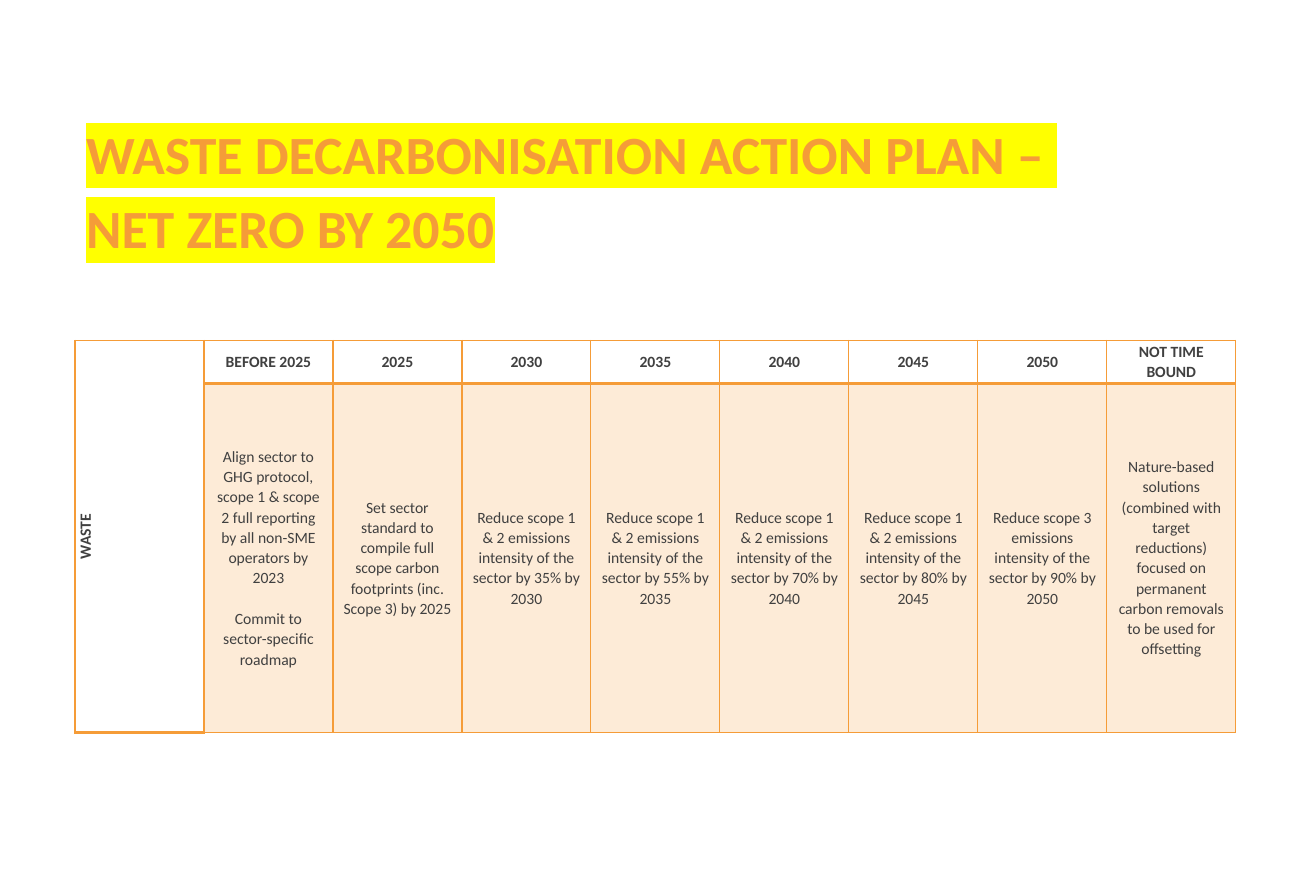
from lxml import etree
from pptx import Presentation
from pptx import util as u
from pptx.dml.color import RGBColor
from pptx.enum import text
from pptx.oxml.ns import qn

# Content
TITLE = ["WASTE DECARBONISATION ACTION PLAN – ", "NET ZERO BY 2050"]
SECTOR = "WASTE"
CUTS = [(2030, "1 & 2", 35), (2035, "1 & 2", 55), (2040, "1 & 2", 70),
        (2045, "1 & 2", 80), (2050, "3", 90)]
PLAN = [
    ("BEFORE 2025", ["Align sector to GHG protocol, scope 1 & scope 2 full "
                     "reporting by all non-SME operators by 2023",
                     "Commit to sector-specific roadmap"]),
    ("2025", ["Set sector standard to compile full scope carbon footprints "
              "(inc. Scope 3) by 2025"]),
    *[(str(year), [f"Reduce scope {scope} emissions intensity of the sector "
                   f"by {cut}% by {year}"]) for year, scope, cut in CUTS],
    ("NOT TIME BOUND", ["Nature-based solutions (combined with target "
                        "reductions) focused on permanent carbon removals "
                        "to be used for offsetting"]),
]

# Look
ORANGE = RGBColor(0xF5, 0x9C, 0x38)
YELLOW = RGBColor(0xFF, 0xFF, 0x00)
GREY = RGBColor(0x40, 0x40, 0x40)
PLAIN_STYLE = "{2D5ABB26-0587-4C30-8999-92F81FD0307C}"
TITLE_FONT = {"name": "Calibri", "size": u.Pt(34.4), "bold": True}
CELL_FONT = {"name": "Calibri", "size": u.Pt(10)}
CELL_PARA = {"alignment": text.PP_ALIGN.CENTER, "line_spacing": 1.07,
             "space_after": u.Pt(8)}
CELL_BOX = {"margin_left": u.Pt(5.4), "margin_right": u.Pt(5.4),
            "margin_top": 0, "margin_bottom": 0,
            "vertical_anchor": text.MSO_ANCHOR.MIDDLE}
PARA_GAP = u.Pt(13)

# Grid
LEFT = u.Mm(16.9)
N_COLS = len(PLAN) + 1
COL_W = u.Mm(262) // N_COLS
ROW_H = [u.Inches(0.38), u.Inches(3.1)]


def apply(target, values):
    for name, value in values.items():
        setattr(target, name, value)


def set_borders(cell, bottom):
    tcPr = cell._tc.get_or_add_tcPr()
    for i, (side, width) in enumerate(zip("LRTB", (1, 1, 1, bottom))):
        ln = etree.Element(qn(f"a:ln{side}"), w=str(u.Pt(width)), cmpd="sng")
        fill = etree.SubElement(ln, qn("a:solidFill"))
        etree.SubElement(fill, qn("a:srgbClr"), val=str(ORANGE))
        etree.SubElement(ln, qn("a:prstDash"), val="solid")
        tcPr.insert(i, ln)


def fill_cell(cell, lines, bold, tinted):
    apply(cell, CELL_BOX)
    tf = cell.text_frame
    tf.text = "\n".join(lines)
    for p in tf.paragraphs:
        apply(p, CELL_PARA)
        for r in p.runs:
            apply(r.font, {**CELL_FONT, "bold": bold})
            r.font.color.rgb = GREY
    for p in tf.paragraphs[:-1]:
        p.space_after = PARA_GAP
    if tinted:
        cell.fill.solid()
        cell.fill.fore_color.rgb = ORANGE
        color = cell._tc.tcPr.find(".//" + qn("a:srgbClr"))
        etree.SubElement(color, qn("a:alpha"), val="20000")
    else:
        cell.fill.background()
    set_borders(cell, 1 if tinted else 2)


# Custom page size, without the template's 4:3 label
prs = Presentation()
prs.slide_width = u.Mm(297)
prs.slide_height = u.Mm(201)
prs.element.find(qn("p:sldSz")).attrib.pop("type", None)
s = prs.slides.add_slide(prs.slide_layouts[5])

# Title
sp = s.shapes.title
apply(sp, {"left": LEFT, "top": u.Mm(27.5),
           "width": u.Inches(10.63), "height": u.Inches(0.58)})
tf = sp.text_frame
apply(tf, {"text": "\n".join(TITLE), "word_wrap": True,
           "auto_size": text.MSO_AUTO_SIZE.NONE,
           "vertical_anchor": text.MSO_ANCHOR.TOP})
for i, p in enumerate(tf.paragraphs):
    apply(p, {"alignment": text.PP_ALIGN.LEFT, "line_spacing": 0.9,
              "space_before": u.Pt(10.6 if i else 0)})
    r = p.runs[0]
    apply(r.font, TITLE_FONT)
    r.font.color.rgb = ORANGE
    mark = etree.Element(qn("a:highlight"))
    etree.SubElement(mark, qn("a:srgbClr"), val=str(YELLOW))
    r._r.rPr.find(qn("a:solidFill")).addnext(mark)

# Action plan table
table = s.shapes.add_table(2, N_COLS, LEFT, u.Mm(76.8),
                           COL_W * N_COLS, sum(ROW_H)).table
table.first_row = table.horz_banding = False
table._tbl.tblPr.find(qn("a:tableStyleId")).text = PLAIN_STYLE
for col in table.columns:
    col.width = COL_W
for row, height in zip(table.rows, ROW_H):
    row.height = height

# Sector label down both rows
sector = table.cell(0, 0)
sector.merge(table.cell(1, 0))
fill_cell(sector, [SECTOR], True, False)
sector._tc.tcPr.set("vert", "vert270")
table.cell(1, 0).fill.background()
set_borders(table.cell(1, 0), 2)

# Milestones
for c, (period, actions) in enumerate(PLAN, 1):
    fill_cell(table.cell(0, c), [period], True, False)
    fill_cell(table.cell(1, c), actions, False, True)

prs.save("out.pptx")
